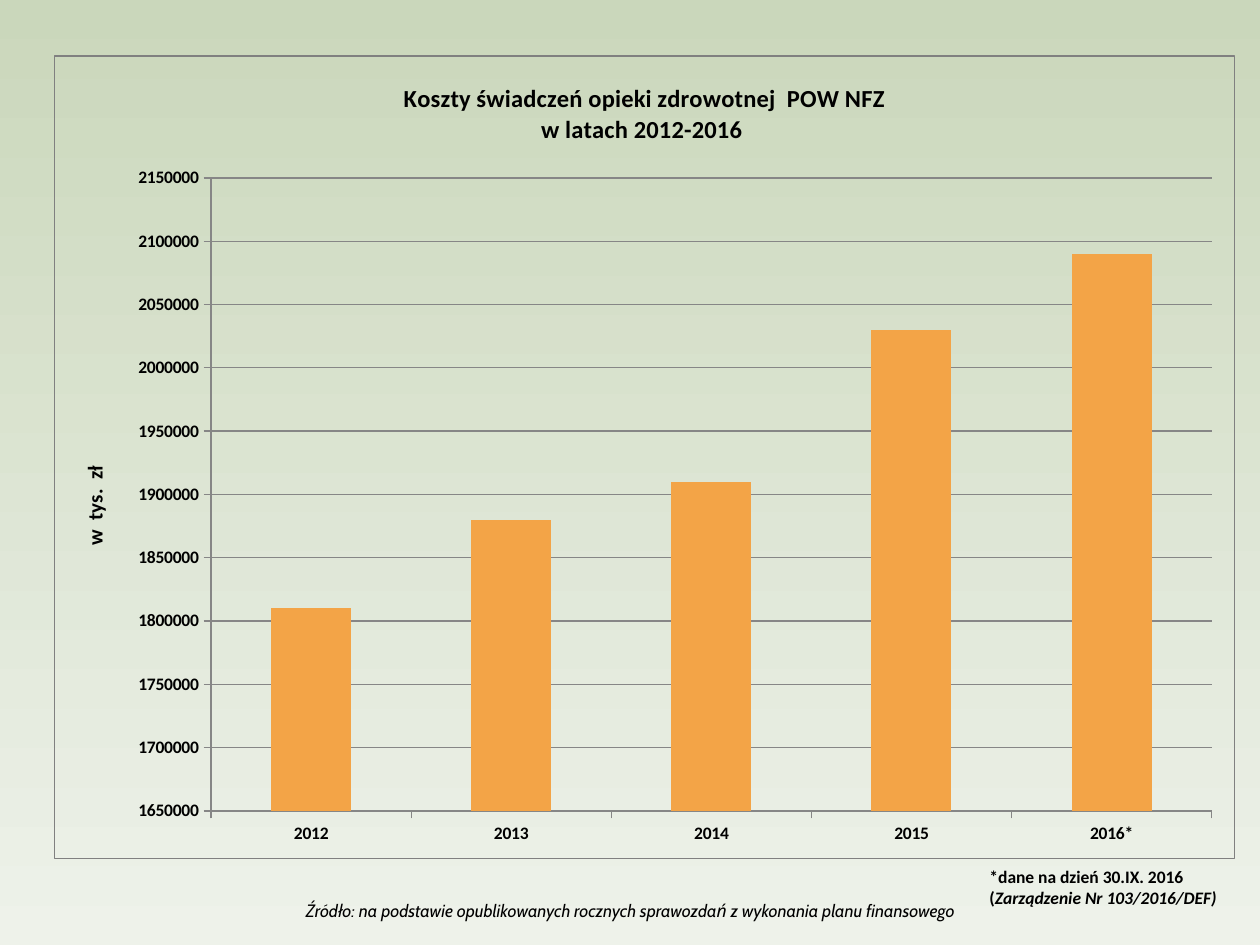
from dataclasses import dataclass

from lxml import etree
from pptx import Presentation
from pptx.chart.data import CategoryChartData
from pptx.dml.color import RGBColor as Rgb
from pptx.enum.chart import XL_CHART_TYPE as ChartType, XL_TICK_MARK as Tick
from pptx.enum.text import PP_ALIGN as Align
from pptx.oxml import parse_xml
from pptx.oxml.ns import nsdecls, qn
from pptx.util import Inches, Pt


@dataclass(frozen=True)
class Theme:
    top: str = "CAD7BB"
    bottom: str = "EEF2EA"
    bar: str = "F3A447"
    line: str = "868686"
    border: str = "808080"
    text: str = "000000"
    font: str = "Calibri"
    source_font: str = "Cabin"
    body: int = 10
    axis_title: int = 12
    title: int = 14


THEME = Theme()
WIDTH, HEIGHT = Inches(10), Inches(7.5)
COSTS = {
    "2012": 1810000,
    "2013": 1880000,
    "2014": 1910000,
    "2015": 2030000,
    "2016*": 2090000,
}


def place(left, top, width, height):
    return tuple(round(side * percent / 100) for side, percent in
                 zip((WIDTH, HEIGHT) * 2, (left, top, width, height)))


def style(font, size, name=THEME.font, bold=False, italic=False):
    font.size, font.name = Pt(size), name
    font.bold, font.italic = bold, italic
    font.color.rgb = Rgb.from_string(THEME.text)


def paint_background(page):
    fill = page.background.fill
    fill.gradient()
    fill.gradient_angle = 270
    for stop, color in zip(fill.gradient_stops, (THEME.top, THEME.bottom)):
        stop.color.rgb = Rgb.from_string(color)


def make_layout(parent, **percents):
    for old in parent.findall(qn("c:layout")):
        parent.remove(old)
    layout = parse_xml(f"<c:layout {nsdecls('c')}/>")
    manual = etree.SubElement(layout, qn("c:manualLayout"))
    if "w" in percents:
        etree.SubElement(manual, qn("c:layoutTarget")).set("val", "inner")
    for side in "xy":
        etree.SubElement(manual, qn(f"c:{side}Mode")).set("val", "edge")
    for key, percent in percents.items():
        etree.SubElement(manual, qn(f"c:{key}")).set("val", str(percent / 100))
    return layout


def write_title(title, lines, size, x, y):
    frame = title.text_frame
    frame.text = "\n".join(lines)
    for para in frame.paragraphs:
        para.alignment = Align.CENTER
        for span in para.runs:
            style(span.font, size, bold=True)
    element = title._element
    layout = make_layout(element, x=x, y=y)
    element.find(qn("c:tx")).addnext(layout)


def add_border(chart):
    border = parse_xml(
        f"<c:spPr {nsdecls('c', 'a')}><a:noFill/><a:ln w='9525'><a:solidFill>"
        f"<a:srgbClr val='{THEME.border}'/></a:solidFill></a:ln></c:spPr>")
    chart._chartSpace.find(qn("c:chart")).addnext(border)


def style_line(line):
    line.color.rgb = Rgb.from_string(THEME.line)
    line.width = Pt(0.75)


def style_axes(chart):
    for axis in (chart.category_axis, chart.value_axis):
        axis.major_tick_mark = Tick.OUTSIDE
        axis.minor_tick_mark = Tick.NONE
        style_line(axis.format.line)
        style(axis.tick_labels.font, THEME.body, bold=True)
    values = chart.value_axis
    values.minimum_scale, values.maximum_scale = 1650000, 2150000
    values.major_unit = 50000
    values.has_major_gridlines = True
    style_line(values.major_gridlines.format.line)
    values.tick_labels.number_format = "0"
    values.tick_labels.number_format_is_linked = False
    write_title(values.axis_title, ["w  tys.  zł"], THEME.axis_title, 1.85, 50.6)


def add_cost_chart(page):
    data = CategoryChartData(number_format="0")
    data.categories = list(COSTS)
    data.add_series("Series 1", list(COSTS.values()))
    chart = page.shapes.add_chart(
        ChartType.COLUMN_CLUSTERED, *place(4.3, 5.85, 93.75, 85.1), data).chart
    chart.has_legend = False
    style(chart.font, THEME.body, bold=True)
    chart.has_title = True
    write_title(chart.chart_title,
                ["Koszty świadczeń opieki zdrowotnej  POW NFZ", "w latach 2012-2016 "],
                THEME.title, 29.25, 2.75)
    style_axes(chart)
    plot = chart.plots[0]
    plot.gap_width, plot.vary_by_categories = 150, False
    fill = plot.series[0].format.fill
    fill.solid()
    fill.fore_color.rgb = Rgb.from_string(THEME.bar)
    area = chart._chartSpace.find(qn("c:chart")).find(qn("c:plotArea"))
    area.insert(0, make_layout(area, x=13.25, y=15.2, w=84.8, h=78.85))
    add_border(chart)


def add_note(page, spot, spans, align=Align.LEFT):
    frame = page.shapes.add_textbox(*place(*spot)).text_frame
    frame.word_wrap = True
    para = frame.paragraphs[0]
    para.alignment = align
    for text, look in spans:
        span = para.add_run()
        span.text = text
        style(span.font, THEME.body, **look)


def main():
    deck = Presentation()
    deck.slide_width, deck.slide_height = WIDTH, HEIGHT
    page = deck.slides.add_slide(deck.slide_layouts[6])
    paint_background(page)
    add_cost_chart(page)
    add_note(page, (13, 94.6, 74, 3.6), [
        ("Źródło: na podstawie opublikowanych rocznych sprawozdań "
         "z wykonania planu finansowego",
         {"name": THEME.source_font, "italic": True}),
    ], Align.CENTER)
    add_note(page, (77.55, 90.97, 22.4, 5.87), [
        ("*dane na dzień 30.IX. 2016 (", {"bold": True}),
        ("Zarządzenie Nr 103/2016/DEF)", {"bold": True, "italic": True}),
    ])
    deck.save("out.pptx")


if __name__ == "__main__":
    main()
